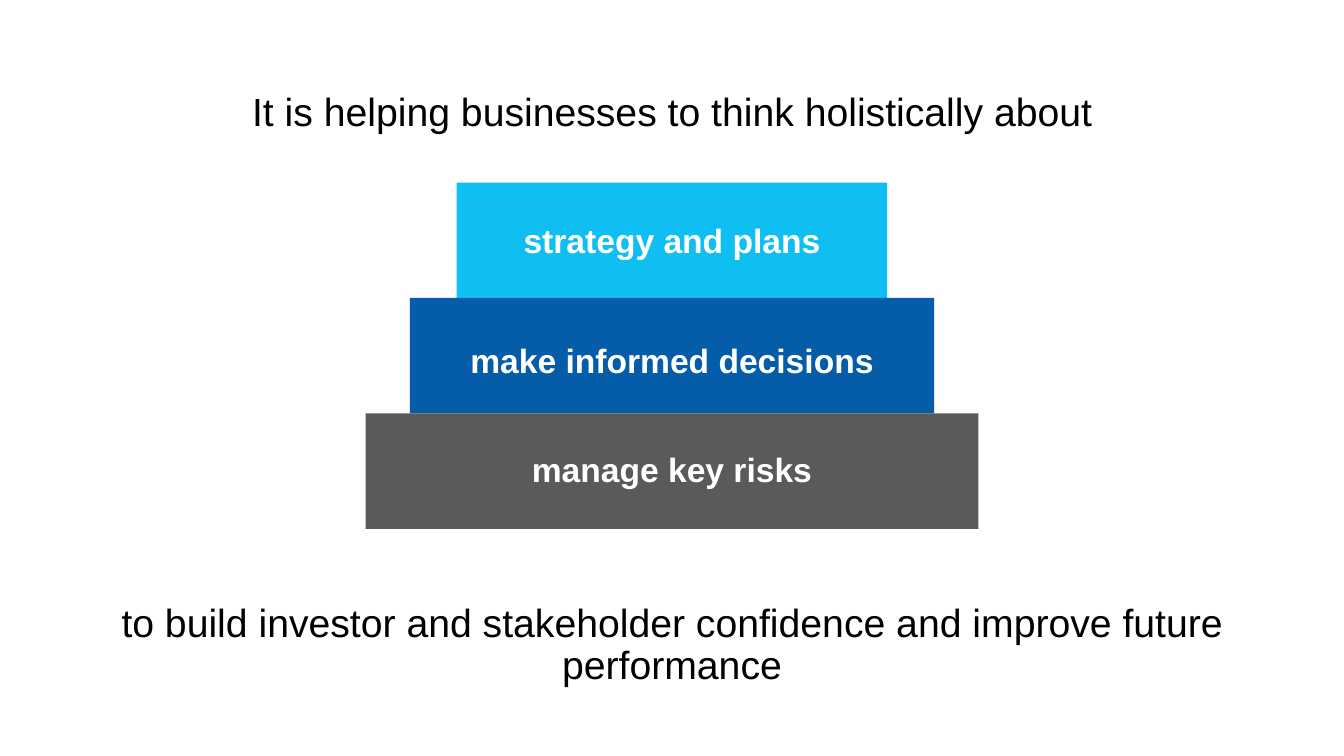
from dataclasses import dataclass

from pptx import Presentation
from pptx.dml.color import RGBColor
from pptx.enum.shapes import MSO_SHAPE
from pptx.enum.text import MSO_ANCHOR, MSO_AUTO_SIZE, PP_ALIGN
from pptx.shapes.base import BaseShape
from pptx.slide import Slide
from pptx.util import Cm, Pt

RECT = MSO_SHAPE.RECTANGLE
MIDDLE, TOP = MSO_ANCHOR.MIDDLE, MSO_ANCHOR.TOP
FIXED, GROW = MSO_AUTO_SIZE.NONE, MSO_AUTO_SIZE.SHAPE_TO_FIT_TEXT
CENTER = PP_ALIGN.CENTER

WIDE, HIGH = 33.87, 19.05
STEP_TOP, STEP_HIGH = 4.6, 2.91
LABEL_HIGH = 1.27
LINE_WIDE, LINE_HIGH = 29.21, 3.68


@dataclass(frozen=True)
class Style:
    frame: dict
    para: dict
    font: dict
    color: str


@dataclass(frozen=True)
class Step:
    text: str
    width: float
    label_top: float
    fill: str


LINE = Style(
    {"vertical_anchor": MIDDLE, "auto_size": FIXED, "word_wrap": True},
    {"alignment": CENTER, "line_spacing": 0.9, "space_before": Pt(10)},
    {"name": "Arial", "size": Pt(28), "bold": False},
    "000000",
)
LABEL = Style(
    {"vertical_anchor": TOP, "auto_size": GROW, "word_wrap": True},
    {"alignment": CENTER},
    {"name": "Arial", "size": Pt(24), "bold": True},
    "FFFFFF",
)
STEPS = [
    Step("strategy and plans", 10.85, 5.41, "10BFF1"),
    Step("make informed decisions", 13.21, 8.43, "055CA9"),
    Step("manage key risks", 15.44, 11.18, "595A5A"),
]


def color(code: str) -> RGBColor:
    return RGBColor.from_string(code)


def center(top: float, width: float, height: float) -> tuple:
    """Return left, top, width and height of a box centred on the slide."""
    return Cm((WIDE - width) / 2), Cm(top), Cm(width), Cm(height)


def apply(target: object, values: dict) -> None:
    for name, value in values.items():
        setattr(target, name, value)


def write(shape: BaseShape, text: str, style: Style) -> None:
    frame = shape.text_frame
    frame.text = text
    para = frame.paragraphs[0]
    font = para.runs[0].font
    apply(frame, style.frame)
    apply(para, style.para)
    apply(font, style.font)
    font.color.rgb = color(style.color)


def draw_step(slide: Slide, step: Step, top: float) -> None:
    block = slide.shapes.add_shape(RECT, *center(top, step.width, STEP_HIGH))
    block.shadow.inherit = False
    block.fill.solid()
    block.fill.fore_color.rgb = color(step.fill)
    block.line.fill.background()
    label = slide.shapes.add_textbox(
        *center(step.label_top, step.width, LABEL_HIGH))
    write(label, step.text, LABEL)


def main() -> None:
    deck = Presentation()
    deck.slide_width, deck.slide_height = Cm(WIDE), Cm(HIGH)
    slide = deck.slides.add_slide(deck.slide_layouts.get_by_name("Title Only"))

    title = slide.shapes.title
    title.left, title.top, title.width, title.height = center(
        1.02, LINE_WIDE, LINE_HIGH)
    write(title, "It is helping businesses to think holistically about", LINE)

    close = slide.shapes.add_textbox(*center(14.43, LINE_WIDE, LINE_HIGH))
    write(close, "to build investor and stakeholder confidence "
                 "and improve future performance", LINE)

    for row, step in enumerate(STEPS):
        draw_step(slide, step, STEP_TOP + row * STEP_HIGH)

    deck.save("out.pptx")


if __name__ == "__main__":
    main()
